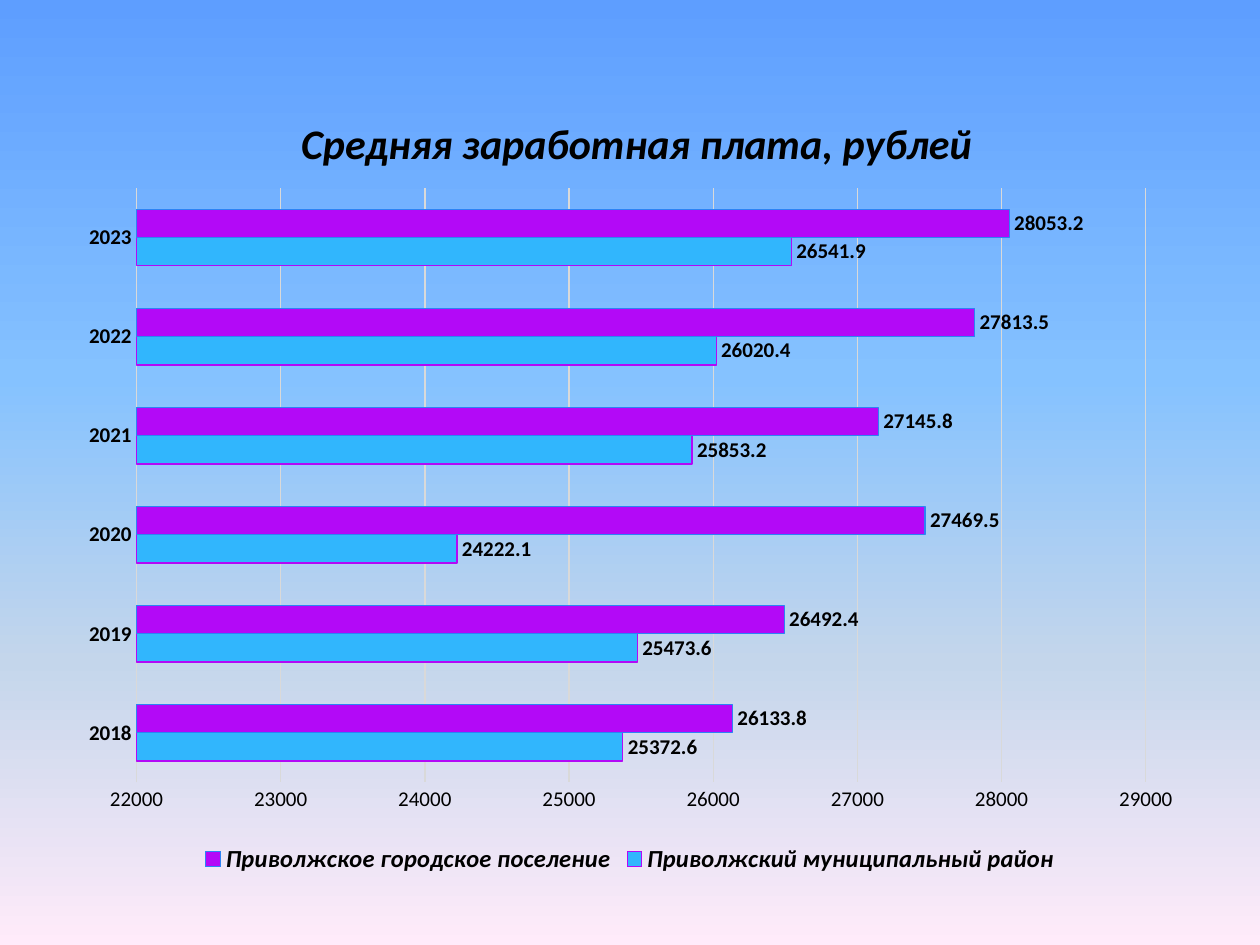
"""Build a slide with a bar chart of average wages by year."""
from lxml import etree
from pptx import Presentation
from pptx.chart.data import CategoryChartData
from pptx.dml.color import RGBColor
from pptx.enum.chart import XL_CHART_TYPE, XL_LABEL_POSITION, XL_LEGEND_POSITION, XL_TICK_MARK
from pptx.oxml import parse_xml
from pptx.oxml.ns import qn
from pptx.util import Inches, Pt

BAR = XL_CHART_TYPE.BAR_CLUSTERED
OUTER = XL_LABEL_POSITION.OUTSIDE_END
BOTTOM = XL_LEGEND_POSITION.BOTTOM
NO_TICK = XL_TICK_MARK.NONE
BLACK, GREY = "000000", "D9D9D9"
BLUE, PURPLE, EDGE = "31B6FD", "B309F7", "2D83F4"


def style(font, text=None, size=12, bold=False, italic=False, hue=BLACK):
    if text is not None:
        font.text = text
        font = font.paragraphs[0].runs[0].font
    font.name, font.size, font.bold, font.italic = "Calibri", Pt(size), bold, italic
    font.color.rgb = RGBColor.from_string(hue)


def place(node, **spots):
    layout = etree.Element(qn("c:layout"))
    manual = etree.SubElement(layout, qn("c:manualLayout"))
    if "w" in spots:
        etree.SubElement(manual, qn("c:layoutTarget")).set("val", "inner")
    for key in ("x", "y"):
        etree.SubElement(manual, qn(f"c:{key}Mode")).set("val", "edge")
    for key, share in spots.items():
        etree.SubElement(manual, qn(f"c:{key}")).set("val", str(share))
    for old in node.findall(qn("c:layout")):
        node.remove(old)
    text = node.find(qn("c:tx"))
    node.insert(0 if text is None else 1, layout)


deck = Presentation()
deck.slide_width, deck.slide_height = Inches(10), Inches(7.5)
wide, high = deck.slide_width, deck.slide_height
slide = deck.slides.add_slide(deck.slide_layouts[6])

fill = slide.background.fill
fill.gradient()
fill.gradient_angle = 270
stops = slide.background._cSld.find(".//" + qn("a:gsLst"))
for old in list(stops):
    stops.remove(old)
for share, hue in ((0, "5E9EFF"), (40, "85C2FF"), (70, "C4D6EB"), (100, "FFEBFA")):
    stops.append(parse_xml(
        '<a:gs xmlns:a="http://schemas.openxmlformats.org/drawingml/2006/main" '
        f'pos="{share * 1000}"><a:srgbClr val="{hue}"/></a:gs>'))

rows = (
    ("Приволжский муниципальный район", BLUE, PURPLE,
     (25372.6, 25473.6, 24222.1, 25853.2, 26020.4, 26541.9)),
    ("Приволжское городское поселение", PURPLE, EDGE,
     (26133.8, 26492.4, 27469.5, 27145.8, 27813.5, 28053.2)),
)
data = CategoryChartData()
data.categories = [str(year) for year in range(2018, 2024)]
for name, hue, edge, wages in rows:
    data.add_series(name, wages)

frame = slide.shapes.add_chart(
    BAR, int(wide * 0.055), int(high * 0.08), int(wide * 0.89), int(high * 0.85), data)
chart = frame.chart
style(chart.font, size=14)
chart.has_title = True
title = chart.chart_title
style(title.text_frame, "Средняя заработная плата, рублей", size=24, bold=True, italic=True)
title.include_in_layout = False
place(title._element, x=0.2, y=0.04)

chart.has_legend = True
chart.legend.position = BOTTOM
chart.legend.include_in_layout = False
style(chart.legend.font, size=14, bold=True, italic=True)

years = chart.category_axis
years.major_tick_mark = years.minor_tick_mark = NO_TICK
years.format.line.color.rgb = RGBColor.from_string(GREY)
years.format.line.width = Pt(1)
style(years.tick_labels.font, bold=True)

scale = chart.value_axis
scale.minimum_scale, scale.maximum_scale, scale.major_unit = 22000, 29000, 1000
scale.major_tick_mark = scale.minor_tick_mark = NO_TICK
scale.format.line.fill.background()
grid = scale.major_gridlines.format.line
grid.color.rgb = RGBColor.from_string(GREY)
grid.width = Pt(0.75)
style(scale.tick_labels.font)

plot = chart.plots[0]
plot.gap_width = 150
plot.vary_by_categories = False
place(plot._element.getparent(), x=0.06, y=0.14, w=0.9, h=0.74)
for series, (name, hue, edge, wages) in zip(plot.series, rows):
    series.format.fill.solid()
    series.format.fill.fore_color.rgb = RGBColor.from_string(hue)
    series.format.line.color.rgb = RGBColor.from_string(edge)
    series.format.line.width = Pt(0.75)
    labels = series.data_labels
    labels.show_value = True
    labels.position = OUTER
    style(labels.font, bold=True)

deck.save("out.pptx")
